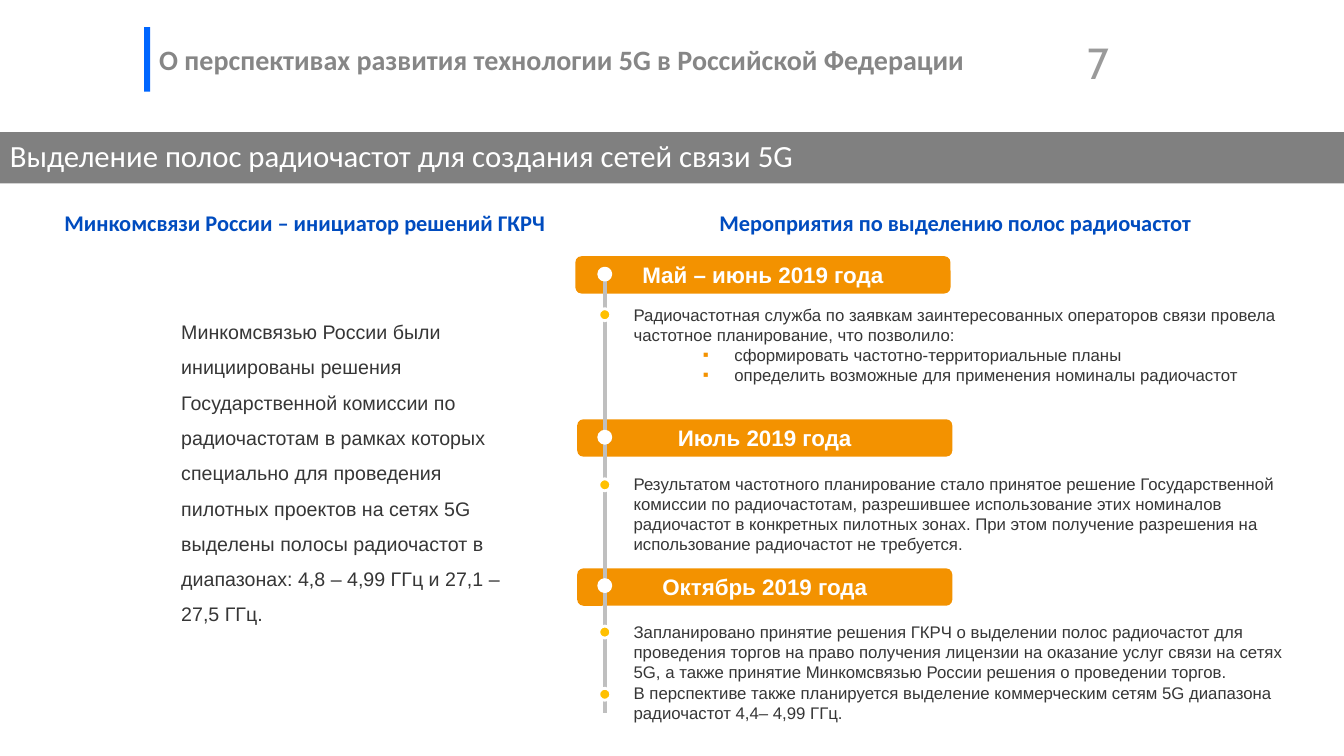
import pptx
import pptx.util
import pptx.dml.color
import pptx.enum.shapes
import pptx.enum.text
import pptx.oxml
import pptx.oxml.ns

Pt = pptx.util.Pt
Shape = pptx.enum.shapes.MSO_SHAPE
Align = pptx.enum.text.PP_ALIGN
Anchor = pptx.enum.text.MSO_ANCHOR

BLUE, NAVY, ORANGE, YELLOW = "0066FF", "004CBF", "F39200", "FFC000"
WHITE, BAND, TITLE, PAGE, INK, RAIL = "FFFFFF", "808080", "868686", "9A9A9A", "363636", "BFBFBF"
INSETS = (7.2, 3.6, 7.2, 3.6)
AXIS = 432
DOT = 8.6


def color(code):
    return pptx.dml.color.RGBColor.from_string(code)


class Deck:
    def __init__(self):
        self.file = pptx.Presentation()
        self.file.slide_width, self.file.slide_height = Pt(960), Pt(540)
        self.slide = self.file.slides.add_slide(self.file.slide_layouts[6])
        self.shapes = self.slide.shapes

    def shape(self, kind, area, fill, line=None):
        item = self.shapes.add_shape(kind, *map(Pt, area))
        item.shadow.inherit = False
        item.fill.solid()
        item.fill.fore_color.rgb = color(fill)
        if line:
            item.line.color.rgb = color(line)
            item.line.width = Pt(2)
        else:
            item.line.fill.background()
        return item

    def label(self, item, text, size, tint, font="Arial", bold=False, align=Align.LEFT,
              anchor=Anchor.TOP, space=None, insets=INSETS):
        """Put text, one paragraph a line, into a shape or text box."""
        frame = item.text_frame
        frame.word_wrap = True
        frame.vertical_anchor = anchor
        (frame.margin_left, frame.margin_top,
         frame.margin_right, frame.margin_bottom) = map(Pt, insets)
        frame.text = text
        for para in frame.paragraphs:
            para.alignment = align
            if space:
                para.line_spacing = space
            for run in para.runs:
                run.font.name, run.font.size, run.font.bold = font, Pt(size), bold
                run.font.color.rgb = color(tint)

    def text(self, area, text, size, tint, **style):
        item = self.shapes.add_textbox(*map(Pt, area))
        self.label(item, text, size, tint, **style)
        return item

    def bullet(self, para, left):
        props = para._p.get_or_add_pPr()
        props.set("marL", str(Pt(left)))
        props.set("indent", str(-Pt(22.5)))
        space = pptx.oxml.ns.nsdecls("a")
        for xml in (f'<a:buClr {space}><a:srgbClr val="{ORANGE}"/></a:buClr>',
                    f'<a:buFont {space} typeface="Arial"/>',
                    f'<a:buChar {space} char="▪"/>'):
            props.append(pptx.oxml.parse_xml(xml))

    def stage(self, left, top, date, body, height, lines):
        """Draw one dated step; body is the top of its bulleted text."""
        bar = self.shape(Shape.ROUNDED_RECTANGLE, (left, top, 268, 26.7), ORANGE)
        self.label(bar, date, 16, WHITE, bold=True, align=Align.CENTER, anchor=Anchor.MIDDLE)
        note = self.text((423, body, 523, height), "\n".join(lines), 12, INK)
        for para, line in zip(note.text_frame.paragraphs, lines):
            self.bullet(para, 94.5 if line[0].islower() else 22.5)

    def rail(self, top, end):
        line = self.shapes.add_connector(pptx.enum.shapes.MSO_CONNECTOR.STRAIGHT,
                                         Pt(AXIS), Pt(top), Pt(AXIS), Pt(end))
        line.line.color.rgb = color(RAIL)
        line.line.width = Pt(3)
        space = pptx.oxml.ns.nsdecls("a")
        line._element.spPr.append(pptx.oxml.parse_xml(f"<a:effectLst {space}/>"))

    def dot(self, top, fill):
        self.shape(Shape.OVAL, (AXIS - DOT / 2, top, DOT, DOT), fill, WHITE)


STAGES = [
    (411, 183, "Май – июнь 2019 года", 213.8, 65.5, [
        "Радиочастотная служба по заявкам заинтересованных операторов связи провела "
        "частотное планирование, что позволило:",
        "сформировать частотно-территориальные планы",
        "определить возможные для применения номиналы радиочастот"]),
    (412.3, 299.5, "Июль 2019 года", 334.8, 65.5, [
        "Результатом частотного планирование стало принятое решение Государственной комиссии "
        "по радиочастотам, разрешившее использование этих номиналов радиочастот в конкретных "
        "пилотных зонах. При этом получение разрешения на использование радиочастот не требуется."]),
    (412.3, 406, "Октябрь 2019 года", 440.6, 80, [
        "Запланировано принятие решения ГКРЧ о выделении полос радиочастот для проведения торгов "
        "на право получения лицензии на оказание услуг связи на сетях 5G, а также принятие "
        "Минкомсвязью России решения о проведении торгов.",
        "В перспективе также планируется выделение коммерческим сетям 5G диапазона радиочастот "
        "4,4– 4,99 ГГц."]),
]


def main():
    deck = Deck()
    deck.shape(Shape.RECTANGLE, (103, 19.4, 4.3, 46), BLUE)
    deck.text((592, 23, 206.5, 21.6), "7", 31, PAGE, font="Cabin", align=Align.RIGHT,
              insets=(6.5, 2.9, 6.5, 2.9))
    band = deck.shape(Shape.RECTANGLE, (0, 94.3, 960, 36.7), BAND)
    deck.label(band, "Выделение полос радиочастот для создания сетей связи 5G", 22, WHITE,
               font="Calibri", anchor=Anchor.MIDDLE, space=0.7, insets=(7.2, 3.6, 7.2, 0))
    deck.text((122.4, 216.7, 263.5, 236), "Минкомсвязью России были инициированы решения "
              "Государственной комиссии по радиочастотам в рамках которых специально для "
              "проведения пилотных проектов на сетях 5G выделены полосы радиочастот в "
              "диапазонах: 4,8 – 4,99 ГГц и 27,1 – 27,5 ГГц.", 14, INK, space=1.5)
    for left, width, head in ((35.3, 365, "Минкомсвязи России – инициатор решений ГКРЧ"),
                              (433.4, 498, "Мероприятия по выделению полос радиочастот")):
        deck.text((left, 146.2, width, 26.7), head, 16, NAVY, font="Calibri", bold=True,
                  align=Align.CENTER)
    for stage in STAGES:
        deck.stage(*stage)
    deck.rail(195, 509)
    for top in (191.5, 308, 414):
        deck.dot(top, WHITE)
    for top in (220.5, 342, 447.2, 491.6):
        deck.dot(top, YELLOW)
    deck.text((106.6, 20.9, 624, 48.2),
              "О перспективах развития технологии 5G в Российской Федерации", 20, TITLE,
              font="Calibri", bold=True, anchor=Anchor.MIDDLE, space=0.7)
    deck.file.save("out.pptx")


if __name__ == "__main__":
    main()
